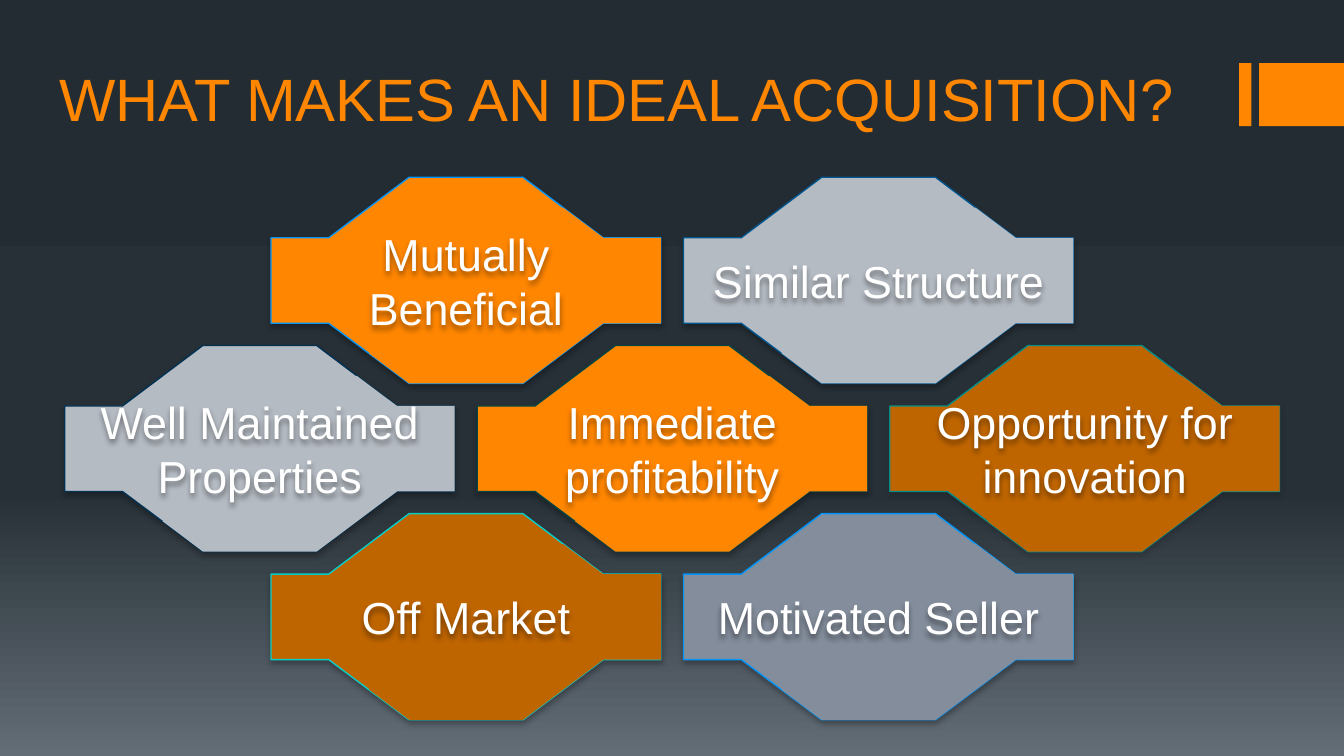
from copy import deepcopy

from lxml import etree
from pptx import Presentation
from pptx.dml.color import RGBColor
from pptx.enum.shapes import MSO_SHAPE
from pptx.enum.text import MSO_ANCHOR, MSO_AUTO_SIZE, PP_ALIGN
from pptx.oxml.ns import qn
from pptx.util import Pt

RECTANGLE = MSO_SHAPE.RECTANGLE
TOP, MIDDLE = MSO_ANCHOR.TOP, MSO_ANCHOR.MIDDLE
LEFT, CENTER = PP_ALIGN.LEFT, PP_ALIGN.CENTER
NO_AUTOFIT = MSO_AUTO_SIZE.NONE

FONT = "Arial"
ORANGE, BROWN, SILVER, SLATE = "FF8600", "BF6500", "B5BBC3", "838D9B"
BACKGROUND_STOPS = [(0, "242C33"), (0.65, "273037"), (1, "636D76")]

BADGE_WIDTH, BADGE_HEIGHT = 208.8, 110.4
FIRST_LEFT, HALF_COLUMN = 34.7, 110.5
FIRST_TOP, ROW_STEP = 95, 90.1
LABEL_HEIGHT = 66

LOWER_RIGHT = [(74, 110.4), (135, 110.4), (178, 78.2), (208.8, 78.2),
               (208.8, 32.4), (178, 32.4)]
OUTLINE = LOWER_RIGHT + [(135, 0), (74, 0), (30.9, 32.4), (0, 32.4),
                         (0, 78.2), (30.9, 78.2)]
OVERLAY = LOWER_RIGHT + [(156.4, 16.2), (52.4, 94.2)]

# Label, half-column, row, fill, outline, shadow opacity in percent
BADGES = [
    ("Off Market", 1, 2, BROWN, "06CEC9", 27),
    ("Motivated Seller", 3, 2, SLATE, "0195F9", 27),
    ("Mutually Beneficial", 1, 0, ORANGE, "0195F9", 27),
    ("Similar Structure", 3, 0, SILVER, "01568F", 27),
    ("Immediate profitability", 2, 1, ORANGE, "034543", 27),
    ("Well Maintained Properties", 0, 1, SILVER, "013253", 27),
    ("Opportunity for innovation", 4, 1, BROWN, "048C89", 13),
]


def color(value):
    return RGBColor.from_string(value)


def paint(shape, fill, line=None):
    shape.shadow.inherit = False
    shape.fill.solid()
    shape.fill.fore_color.rgb = color(fill)
    if line:
        shape.line.color.rgb = color(line)
        shape.line.width = Pt(0.75)
    else:
        shape.line.fill.background()


def add_shadow(shape, opacity):
    """Give the shape a soft black shadow that falls straight down."""
    shape.shadow.inherit = False
    effects = shape.element.spPr.find(qn("a:effectLst"))
    shadow = etree.SubElement(effects, qn("a:outerShdw"), blurRad=str(Pt(3)),
                              dist=str(Pt(2)), dir="5400000", rotWithShape="0")
    black = etree.SubElement(shadow, qn("a:srgbClr"), val="000000")
    etree.SubElement(black, qn("a:alpha"), val=str(opacity * 1000))


def write(shape, text, size, text_color, alignment, anchor):
    frame = shape.text_frame
    frame.word_wrap = True
    frame.auto_size = NO_AUTOFIT
    frame.vertical_anchor = anchor
    frame.text = text
    paragraph = frame.paragraphs[0]
    paragraph.alignment = alignment
    paragraph.font.name = FONT
    paragraph.font.size = Pt(size)
    paragraph.font.color.rgb = color(text_color)


def set_background(slide):
    fill = slide.background.fill
    fill.gradient()
    fill.gradient_angle = 270
    stop_list = slide.element.find(".//" + qn("a:gsLst"))
    stop_list.append(deepcopy(stop_list[0]))
    for stop, (position, value) in zip(fill.gradient_stops, BACKGROUND_STOPS):
        stop.position = position
        stop.color.rgb = color(value)


def add_accent_bars(slide):
    for left, width in [(663.8, 6.7), (674.6, 45.4)]:
        bar = slide.shapes.add_shape(RECTANGLE, Pt(left), Pt(33.8),
                                     Pt(width), Pt(33.8))
        paint(bar, ORANGE)


def set_title(slide, text):
    title = slide.shapes.title
    title.left, title.top = Pt(24.5), Pt(25.9)
    title.width, title.height = Pt(671), Pt(45.4)
    write(title, text, 32, ORANGE, LEFT, TOP)
    frame = title.text_frame
    frame.margin_left = frame.margin_right = Pt(7.2)
    frame.margin_top = frame.margin_bottom = Pt(7.2)


def add_polygon(shapes, left, top, offsets):
    points = [(Pt(left + x), Pt(top + y)) for x, y in offsets]
    builder = shapes.build_freeform(*points[0])
    builder.add_line_segments(points[1:], close=True)
    return builder.convert_to_shape()


def add_badge(slide, left, top, fill, line, opacity):
    """Add an outlined badge whose lower right half is covered without a line."""
    shapes = slide.shapes.add_group_shape().shapes
    outline = add_polygon(shapes, left, top, OUTLINE)
    paint(outline, fill, line)
    add_shadow(outline, opacity)
    paint(add_polygon(shapes, left, top, OVERLAY), fill)


def add_label(slide, left, top, text):
    label = slide.shapes.add_textbox(
        Pt(left), Pt(top + (BADGE_HEIGHT - LABEL_HEIGHT) / 2),
        Pt(BADGE_WIDTH), Pt(LABEL_HEIGHT))
    write(label, text, 24, "FFFFFF", CENTER, MIDDLE)
    add_shadow(label, 40)


def main():
    presentation = Presentation()
    presentation.slide_width, presentation.slide_height = Pt(720), Pt(405)
    slide = presentation.slides.add_slide(presentation.slide_layouts[5])
    set_background(slide)
    add_accent_bars(slide)
    set_title(slide, "WHAT MAKES AN IDEAL ACQUISITION?")

    labels = []
    for text, column, row, fill, line, opacity in BADGES:
        left = FIRST_LEFT + column * HALF_COLUMN
        top = FIRST_TOP + row * ROW_STEP
        add_badge(slide, left, top, fill, line, opacity)
        labels.append((left, top, text))
    for label in labels:
        add_label(slide, *label)
    presentation.save("out.pptx")


if __name__ == "__main__":
    main()
